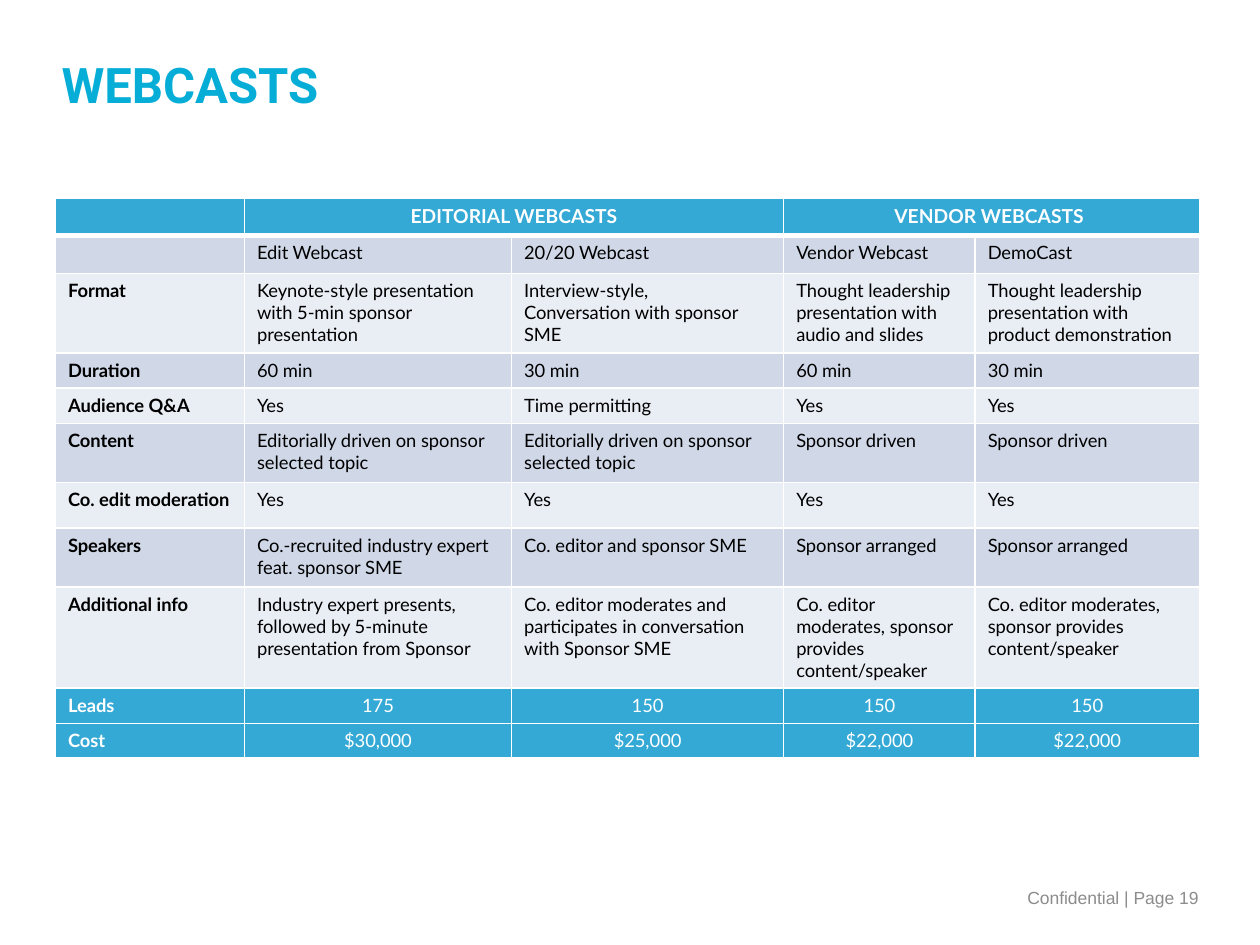
from lxml import etree
from pptx import Presentation
from pptx.dml.color import RGBColor
from pptx.enum.text import MSO_ANCHOR, PP_ALIGN
from pptx.oxml.ns import qn
from pptx.util import Inches, Pt

LEFT, MID, RIGHT = PP_ALIGN.LEFT, PP_ALIGN.CENTER, PP_ALIGN.RIGHT

# Content
TITLE = "WEBCASTS"
FOOTER = "Confidential | Page 19"
ROWS = [
    ["", "EDITORIAL WEBCASTS", "", "VENDOR WEBCASTS ", ""],
    ["", "Edit Webcast", "20/20 Webcast", "Vendor Webcast", "DemoCast"],
    ["Format",
     "Keynote-style presentation\nwith 5-min sponsor presentation",
     "Interview-style,\nConversation with sponsor SME",
     "Thought leadership presentation with audio and slides",
     "Thought leadership presentation with product demonstration"],
    ["Duration", "60 min", "30 min", "60 min", "30 min"],
    ["Audience Q&A", "Yes", "Time permitting", "Yes", "Yes"],
    ["Content"] + ["Editorially driven on sponsor selected topic"] * 2
    + ["Sponsor driven"] * 2,
    ["Co. edit moderation"] + ["Yes"] * 4,
    ["Speakers", "Co.-recruited industry expert feat. sponsor SME",
     "Co. editor and sponsor SME"] + ["Sponsor arranged"] * 2,
    ["Additional info",
     "Industry expert presents, followed by 5-minute presentation from Sponsor",
     "Co. editor moderates and participates in conversation with Sponsor SME"]
    + ["Co. editor moderates, sponsor provides content/speaker"] * 2,
    ["Leads", "175", "150", "150", "150"],
    ["Cost", "$30,000", "$25,000", "$22,000", "$22,000"],
]
SPANS = [(1, 2), (3, 4)]  # merged header columns
WIDTHS = [1.5, 2.12, 2.16, 1.52, 1.78]
HEIGHTS = [0.3, 0.3, 0.63, 0.28, 0.28, 0.47, 0.36, 0.47, 0.8, 0.28, 0.27]
TOTALS = len(ROWS) - 2  # first of the closing blue rows

COLORS = {"title": "06ADD6", "blue": "34A9D5", "odd": "D0D8E8",
          "even": "E9EDF4", "white": "FFFFFF", "black": "000000",
          "gray": "8C8C8C"}


def color(name):
    return RGBColor.from_string(COLORS[name])


def style(para, font, size, tint, bold=False, align=LEFT):
    para.alignment = align
    for run in para.runs:
        run.font.name, run.font.size, run.font.bold = font, Pt(size), bold
        run.font.color.rgb = color(tint)
    if not para.runs:  # keeps an empty cell from growing its row
        etree.SubElement(para._p, qn("a:endParaRPr"), sz=str(int(size * 100)))


def border(cell, low):
    props = cell._tc.get_or_add_tcPr()
    sides = [("L", 1), ("R", 1), ("T", 1), ("B", low)]
    for spot, (side, width) in enumerate(sides):
        line = etree.Element(qn(f"a:ln{side}"), w=str(Pt(width)))
        fill = etree.SubElement(line, qn("a:solidFill"))
        etree.SubElement(fill, qn("a:srgbClr"), val=COLORS["white"])
        props.insert(spot, line)


def label(slide, text, place, *look):
    box = slide.shapes.add_textbox(*map(Inches, place))
    frame = box.text_frame
    frame.word_wrap = True
    frame.vertical_anchor = MSO_ANCHOR.MIDDLE
    frame.text = text
    style(frame.paragraphs[0], *look)
    return frame


def grid(slide):
    place = (0.44, 1.57, sum(WIDTHS), sum(HEIGHTS))
    table = slide.shapes.add_table(
        len(ROWS), len(WIDTHS), *map(Inches, place)).table
    for col, width in zip(table.columns, WIDTHS):
        col.width = Inches(width)
    for row, height in zip(table.rows, HEIGHTS):
        row.height = Inches(height)
    for start, end in SPANS:
        table.cell(0, start).merge(table.cell(0, end))

    for r, row in enumerate(ROWS):
        head, strong = r == 0, r == 0 or r >= TOTALS
        shade = "blue" if strong else ("odd" if r % 2 else "even")
        tint = "white" if strong else "black"
        for c, text in enumerate(row):
            cell = table.cell(r, c)
            cell.text_frame.text = text
            cell.fill.solid()
            cell.fill.fore_color.rgb = color(shade)
            border(cell, 3 if head else 1)
            for para in cell.text_frame.paragraphs:
                style(para, "Lato", 11 if head else 10.5, tint,
                      head or c == 0, MID if strong and c else LEFT)


def main():
    deck = Presentation()
    deck.slide_width, deck.slide_height = Inches(10), Inches(7.5)
    slide = deck.slides.add_slide(deck.slide_layouts[6])
    # Table, footer, title
    grid(slide)
    label(slide, FOOTER, (4.8, 6.92, 4.81, 0.4),
          "Arial", 10, "gray", False, RIGHT)
    title = label(slide, TITLE, (0.39, 0.31, 7.63, 0.77),
                  "Roboto", 28, "title", True)
    title.paragraphs[0].line_spacing = 0.9
    deck.save("out.pptx")


if __name__ == "__main__":
    main()
